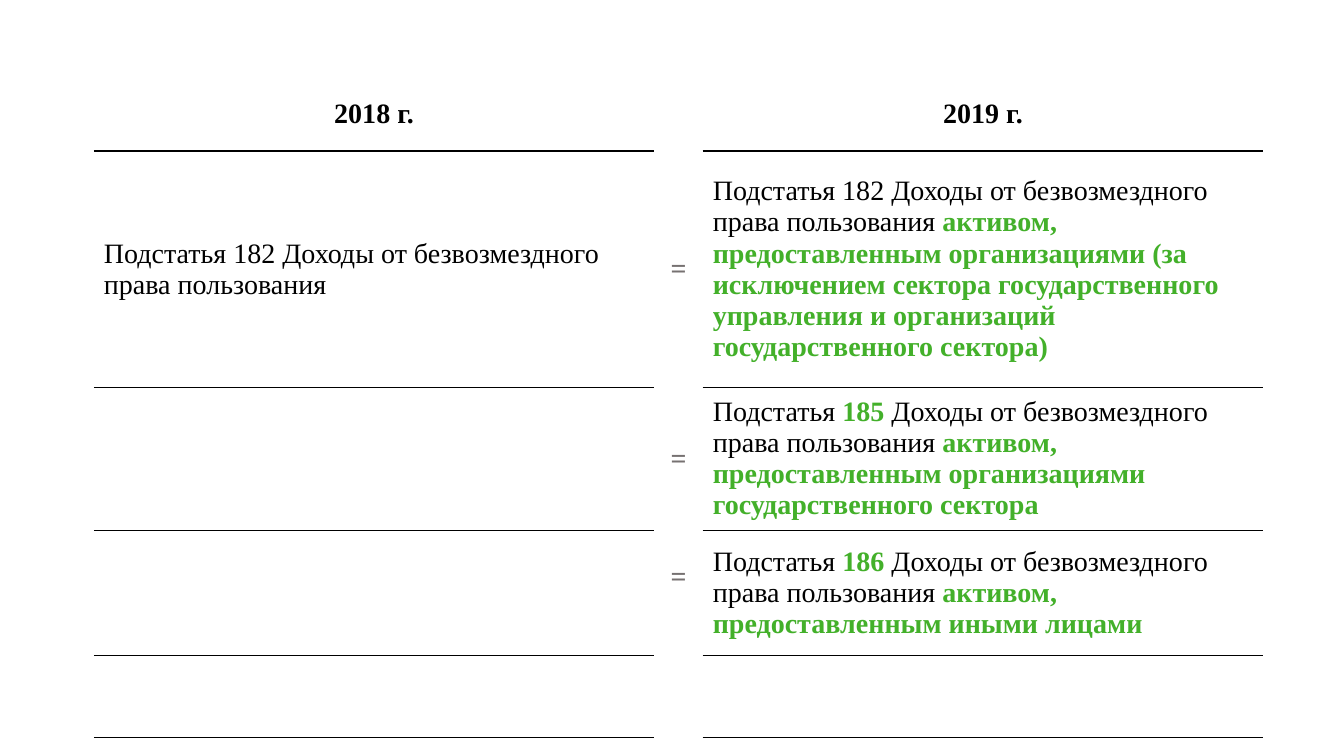
from lxml import etree
from pptx import Presentation
from pptx.dml.color import RGBColor
from pptx.enum.text import MSO_ANCHOR as Anchor, PP_ALIGN as Align
from pptx.oxml.ns import qn
from pptx.util import Inches, Pt

BLACK = RGBColor(0x00, 0x00, 0x00)
WHITE = RGBColor(0xFF, 0xFF, 0xFF)
GRAY = RGBColor(0x76, 0x71, 0x71)
GREEN = RGBColor(0x43, 0xB0, 0x2A)
FONT = "Times New Roman"
PLAIN_STYLE = "{2D5ABB26-0587-4C30-8999-92F81FD0307C}"

COLUMNS = [5.56, 0.48, 5.56]
ROWS = [0.74, 2.34, 1.42, 1.24, 0.82]
LEFT, TOP = 0.93, 0.76
EQUALS_COLUMN = 1
ARTICLE = "Доходы от безвозмездного права пользования "


def add_text(para, text, color=BLACK, bold=False, align=Align.LEFT):
    para.alignment = align
    span = para.add_run()
    span.text = text
    span.font.name = FONT
    span.font.size = Pt(20)
    span.font.bold = bold
    span.font.color.rgb = color


def add_border(cell, side, color, width):
    line = etree.SubElement(cell._tc.get_or_add_tcPr(), qn(f"a:{side}"), w=str(Pt(width)))
    fill = etree.SubElement(line, qn("a:solidFill"))
    etree.SubElement(fill, qn("a:srgbClr"), val=str(color))


deck = Presentation()
deck.slide_width = Inches(13.33)
deck.slide_height = Inches(7.5)
page = deck.slides.add_slide(deck.slide_layouts[6])

frame = page.shapes.add_table(
    len(ROWS), len(COLUMNS),
    Inches(LEFT), Inches(TOP), Inches(sum(COLUMNS)), Inches(sum(ROWS)),
)
table = frame.table
table.first_row = False
table.horz_banding = False
table._tbl.tblPr.find(qn("a:tableStyleId")).text = PLAIN_STYLE

for column, width in zip(table.columns, COLUMNS):
    column.width = Inches(width)
for row, height in zip(table.rows, ROWS):
    row.height = Inches(height)

for row in range(len(ROWS)):
    for column in range(len(COLUMNS)):
        cell = table.cell(row, column)
        cell.vertical_anchor = Anchor.MIDDLE
        color = WHITE if column == EQUALS_COLUMN else BLACK
        header_width = 0.5 if column == EQUALS_COLUMN else 1.5
        if row > 0:
            add_border(cell, "lnT", color, header_width if row == 1 else 0.5)
        add_border(cell, "lnB", color, header_width if row == 0 else 0.5)
        cell.fill.background()

for column, year in [(0, "2018 г."), (2, "2019 г.")]:
    add_text(table.cell(0, column).text_frame.paragraphs[0], year, bold=True, align=Align.CENTER)

add_text(table.cell(1, 0).text_frame.paragraphs[0], "Подстатья 182 " + ARTICLE.strip())

articles = [
    ("182", BLACK, "активом, предоставленным организациями (за исключением сектора "
                   "государственного управления и организаций государственного сектора)"),
    ("185", GREEN, "активом, предоставленным организациями государственного сектора"),
    ("186", GREEN, "активом, предоставленным иными лицами"),
]
for row, (number, color, change) in enumerate(articles, start=1):
    equals = table.cell(row, EQUALS_COLUMN).text_frame.paragraphs[0]
    add_text(equals, "=", color=GRAY, bold=True, align=Align.CENTER)
    para = table.cell(row, 2).text_frame.paragraphs[0]
    add_text(para, "Подстатья ")
    add_text(para, number, color=color, bold=color == GREEN)
    add_text(para, " " + ARTICLE)
    add_text(para, change, color=GREEN, bold=True)

table.cell(3, EQUALS_COLUMN).margin_bottom = Inches(0.36)

deck.save("out.pptx")
